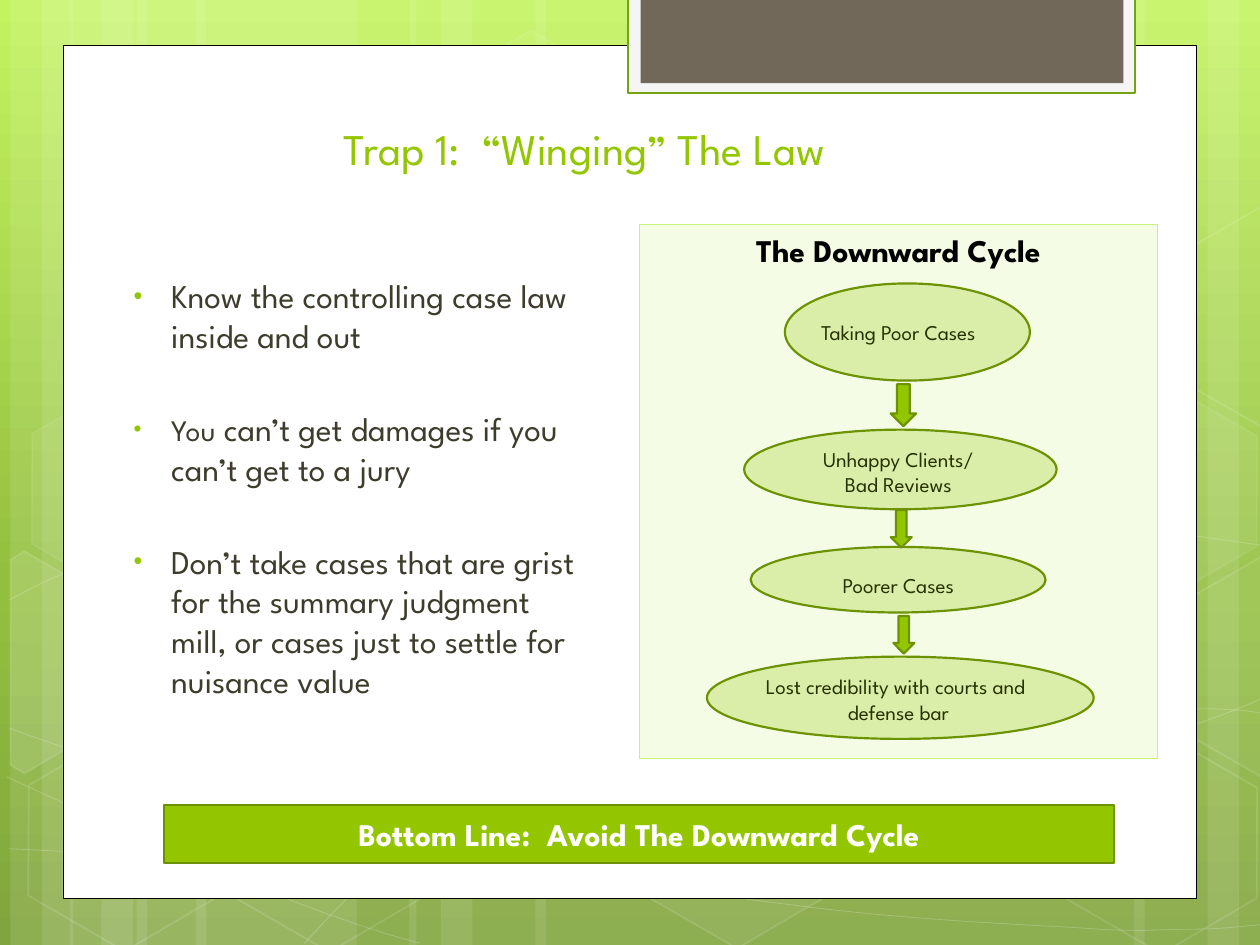
from math import cos, radians, sin

from lxml.etree import SubElement
from pptx import Presentation
from pptx.dml.color import RGBColor
from pptx.enum.shapes import MSO_SHAPE
from pptx.enum.text import MSO_ANCHOR, MSO_AUTO_SIZE, PP_ALIGN
from pptx.oxml.ns import qn
from pptx.util import Pt

FONT = "League Spartan"
TILT = 30
COLORS = {
    "white": "FFFFFF", "black": "000000", "green": "94C600", "dark green": "6D9200",
    "lime": "CAF278", "body": "3E3D2D", "tab": "F5F5F5", "tab edge": "74A510",
    "taupe": "71685A",
}
BACKDROP = [(0, "C3F35F"), (62, "93BF3F"), (100, "81A53E")]

# Left and width of each full-height stripe, and whether it is turned around
STRIPES = [(78, 126, 0), (6, 36, 0), (24, 60, 0), (112, 126, 0), (40, 36, 0), (58, 60, 0),
           (528, 126, 180), (690, 36, 180), (648, 60, 180),
           (306, 222, 0), (234, 36, 0), (252, 60, 0)]
# Bezier curves: a start point, then three points for each segment
CURVES = [
    [(5, 485), (44, 487), (83, 489), (137, 488), (191, 487), (258, 486), (330, 479),
     (402, 472), (504, 456), (570, 444), (636, 431), (703, 409), (725, 397)],
    [(5, 343), (26, 332), (47, 321), (87, 310), (128, 299), (186, 284), (250, 279),
     (314, 274), (392, 273), (471, 279), (550, 284), (682, 307), (725, 312)],
    [(4, 444), (91, 484), (178, 523), (240, 539)],
    [(5, 416), (27, 424), (50, 432), (92, 444), (134, 454), (197, 472), (257, 485),
     (317, 497), (392, 510), (452, 517), (512, 525), (576, 528), (614, 530),
     (652, 533), (662, 531), (680, 531), (699, 531), (712, 529), (725, 528)],
    [(174, 539), (187, 525), (200, 510), (217, 498), (235, 485), (259, 470), (279, 460),
     (300, 450), (312, 446), (338, 438), (364, 431), (413, 421), (438, 416),
     (464, 411), (467, 411), (490, 410), (512, 408), (547, 405), (572, 405),
     (597, 404), (638, 405), (638, 405), (654, 405), (670, 405), (686, 405),
     (699, 405), (711, 406), (718, 407), (722, 408), (724, 407), (724, 408)],
]
# Left, top, fill opacity and line opacity
HEXAGONS = [(240.5, 26, 4, 8), (358, 424, 6, 12), (8, 425.5, 0, 12), (10, 224.5, 7, 8),
            (125, 426, 0, 12), (542, 326, 10, 12), (600.5, 427, 0, 12), (600.5, 226, 7, 8)]
LEFT_EDGE = [(6, 320), (14, 315), (69, 347), (68, 410), (14, 442), (6, 437)]
RIGHT_EDGE = [(667, 349), (721, 318), (726, 321), (726, 441), (721, 444), (667, 413)]

BULLETS = [
    [("Know the controlling case law inside and out", 19)],
    [("You", 17), (" can’t get damages if you can’t get to a jury", 19)],
    [("Don’t take cases that are grist for the summary judgment mill, "
      "or cases just to settle for nuisance value", 19)],
]
# Stage text and the number of lines left free above it
LINE = 14.5
CYCLE = [("Taking Poor Cases", 2), ("Unhappy Clients/", 4), ("Bad Reviews", 0),
         ("Poorer Cases", 3), ("Lost credibility with courts and ", 3), ("defense bar", 0)]
OVALS = [(425.25, 245.5, 178.5, 45.5), (448.5, 162, 140, 55.5),
         (429, 312.5, 168.5, 37.5), (404, 375.25, 221, 47)]
ARROWS = [(509, 219.5, 14.5, 24), (509, 291.5, 12, 21.5), (510.5, 352, 12, 21.5)]


def write(para, text, size=12, color="black", bold=False):
    span = para.add_run()
    span.text = text
    span.font.name = FONT
    span.font.size = Pt(size)
    span.font.bold = bold
    span.font.color.rgb = RGBColor.from_string(COLORS[color])


def turn_back(points, angle=TILT):
    """Turn points against the angle, around the centre their turned frame will have."""
    c, s = cos(radians(angle)), sin(radians(angle))
    turned = [(x * c + y * s, y * c - x * s) for x, y in points]
    middle_x, middle_y = [(min(values) + max(values)) / 2 for values in zip(*turned)]
    center_x, center_y = middle_x * c - middle_y * s, middle_x * s + middle_y * c
    return [(x - middle_x + center_x, y - middle_y + center_y) for x, y in turned]


class SlideBuilder:
    def __init__(self, page):
        self.page = page

    def backdrop(self, stops):
        fill = self.page.background.fill
        fill.gradient()
        fill.gradient_angle = 270
        stop_list = next(self.page.element.iter(qn("a:gsLst")))
        for old in list(stop_list):
            stop_list.remove(old)
        for position, color in stops:
            stop = SubElement(stop_list, qn("a:gs"), pos=str(position * 1000))
            SubElement(stop, qn("a:srgbClr"), val=color)

    def paint(self, shape, fill=None, opacity=100, line=None, width=1.25, line_opacity=100):
        shape.shadow.inherit = False
        properties = shape.element.spPr
        for color, target, place, alpha in (
                (fill, shape.fill, "a:solidFill", opacity),
                (line, shape.line.fill, "a:ln/a:solidFill", line_opacity)):
            if color is None or alpha == 0:
                target.background()
                continue
            target.solid()
            target.fore_color.rgb = RGBColor.from_string(COLORS[color])
            if alpha < 100:
                tint = properties.xpath(place + "/a:srgbClr")[0]
                SubElement(tint, qn("a:alpha"), val=str(alpha * 1000))
        if line:
            shape.line.width = Pt(width)
        return shape

    def shape(self, kind, bounds, **look):
        shape = self.page.shapes.add_shape(kind, *map(Pt, bounds))
        return self.paint(shape, **look)

    def outline(self, points, close, **look):
        points = [(Pt(x), Pt(y)) for x, y in points]
        builder = self.page.shapes.build_freeform(*points[0])
        builder.add_line_segments(points[1:], close=close)
        return self.paint(builder.convert_to_shape(), **look)

    def curve(self, controls, **look):
        """Draw the control points, then join each three into one Bezier segment."""
        shape = self.outline(controls, False, **look)
        lines = list(shape.element.iter(qn("a:lnTo")))
        track = lines[0].getparent()
        for first in range(0, len(lines), 3):
            segment = SubElement(track, qn("a:cubicBezTo"))
            for line in lines[first:first + 3]:
                segment.append(line[0])
                track.remove(line)

    def caption(self, shape, lines, anchor=MSO_ANCHOR.MIDDLE):
        """Centre lines of text, each given as text, space before and format."""
        frame = shape.text_frame
        frame.word_wrap = True
        frame.vertical_anchor = anchor
        for number, (text, space, style) in enumerate(lines):
            para = frame.add_paragraph() if number else frame.paragraphs[0]
            para.alignment = PP_ALIGN.CENTER
            para.space_before = Pt(space)
            write(para, text, **style)

    def title(self, text, bounds):
        title = self.page.shapes.title
        title.left, title.top, title.width, title.height = map(Pt, bounds)
        frame = title.text_frame
        frame.auto_size = MSO_AUTO_SIZE.NONE
        frame.word_wrap = True
        frame.vertical_anchor = MSO_ANCHOR.BOTTOM
        frame.paragraphs[0].alignment = PP_ALIGN.LEFT
        write(frame.paragraphs[0], text, size=25, color="green")

    def bullets(self, items, bounds):
        box = self.page.shapes.add_textbox(*map(Pt, bounds))
        frame = box.text_frame
        frame.word_wrap = True
        for number, spans in enumerate(items):
            para = frame.add_paragraph() if number else frame.paragraphs[0]
            para.space_before = Pt(30.2 if number else 3.8)
            layout = para._p.get_or_add_pPr()
            layout.set("marL", str(Pt(27.25)))
            layout.set("indent", str(Pt(-21.5)))
            color = SubElement(layout, qn("a:buClr"))
            SubElement(color, qn("a:srgbClr"), val=COLORS["green"])
            SubElement(layout, qn("a:buSzPct"), val="76000")
            SubElement(layout, qn("a:buFont"), typeface="Arial")
            SubElement(layout, qn("a:buChar"), char="•")
            for text, size in spans:
                write(para, text, size=size, color="body")


def main():
    deck = Presentation()
    deck.slide_width, deck.slide_height = Pt(720), Pt(540)
    page = deck.slides.add_slide(deck.slide_layouts[5])
    slide = SlideBuilder(page)

    # Green backdrop with stripes, curves and hexagons
    slide.backdrop(BACKDROP)
    for left, width, angle in STRIPES:
        stripe = slide.shape(MSO_SHAPE.RECTANGLE, (left, 0, width, 540), fill="white", opacity=10)
        stripe.rotation = angle
    for controls in CURVES:
        slide.curve(controls, line="white", width=0.5, line_opacity=20)
    for left, top, opacity, line_opacity in HEXAGONS:
        hexagon = slide.shape(MSO_SHAPE.HEXAGON, (left, top, 126, 109.5), fill="white",
                              opacity=opacity, line="white", width=1, line_opacity=line_opacity)
        hexagon.adjustments[0] = 0.285
        hexagon.rotation = TILT
    upper_edge = [(x, y - 200) for x, y in RIGHT_EDGE]
    for points, opacity in ((LEFT_EDGE, 10), (RIGHT_EDGE, 4), (upper_edge, 0)):
        part = slide.outline(turn_back(points), True, fill="white", opacity=opacity,
                             line="white", width=1, line_opacity=12)
        part.rotation = TILT

    # White sheet and top tab
    slide.shape(MSO_SHAPE.RECTANGLE, (36, 26, 648, 487.25), fill="white", line="black", width=0.5)
    slide.shape(MSO_SHAPE.RECTANGLE, (359, -1.5, 289.5, 54.5), fill="tab", line="tab edge")
    slide.shape(MSO_SHAPE.RECTANGLE, (366, -1.5, 276, 49), fill="taupe")

    # Title and bullets; the title goes in front of the sheet
    title = page.shapes.title.element
    title.getparent().append(title)
    slide.title("Trap 1:  “Winging” The Law", (189.25, 61, 342, 42))
    slide.bullets(BULLETS, (63.5, 154, 281, 268))

    # Downward cycle
    panel = slide.shape(MSO_SHAPE.RECTANGLE, (365.4, 128.4, 296, 305), fill="lime", opacity=19,
                        line="lime", width=0.75)
    heading = ("The Downward Cycle", 0, {"size": 18, "bold": True})
    stages = [(text, free * LINE, {"size": 12}) for text, free in CYCLE]
    slide.caption(panel, [heading] + stages, anchor=MSO_ANCHOR.TOP)
    for bounds in OVALS:
        slide.shape(MSO_SHAPE.OVAL, bounds, fill="green", opacity=26, line="dark green")
    for bounds in ARROWS:
        slide.shape(MSO_SHAPE.DOWN_ARROW, bounds, fill="green", line="dark green")

    # Bottom line
    banner = slide.shape(MSO_SHAPE.RECTANGLE, (93.75, 460, 543, 33.25), fill="green",
                         line="dark green")
    slide.caption(banner, [("Bottom Line:  Avoid The Downward Cycle", 0,
                            {"size": 18, "color": "white", "bold": True})])
    deck.save("out.pptx")


if __name__ == "__main__":
    main()
